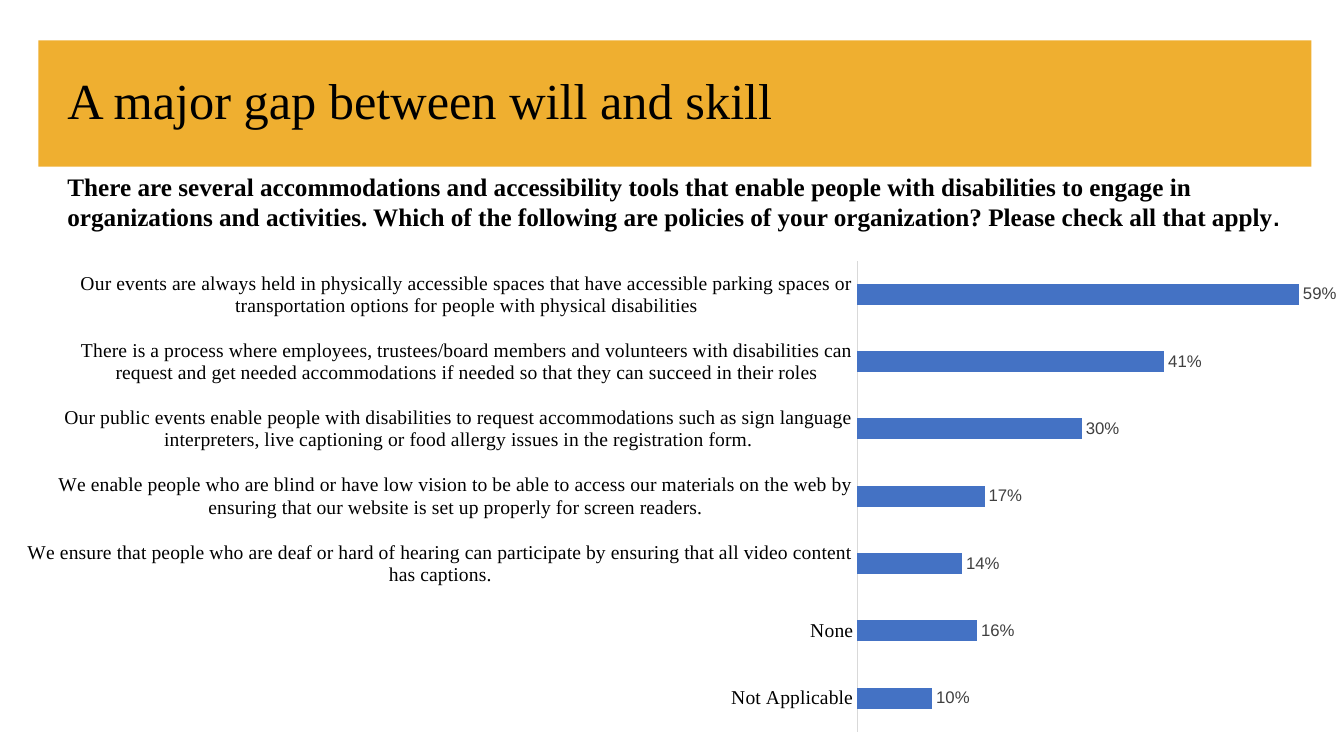
from dataclasses import dataclass

from lxml import etree
from pptx import Presentation
from pptx.chart.data import CategoryChartData
from pptx.dml.color import RGBColor
from pptx.enum import chart as charts, shapes, text
from pptx.oxml import ns
from pptx.util import Cm, Pt


@dataclass(frozen=True)
class Theme:
    banner: str = "EFAF30"
    ink: str = "000000"
    bar: str = "4472C4"
    value: str = "404040"
    axis: str = "D9D9D9"
    serif: str = "Times New Roman"
    sans: str = "Arial"
    title_size: int = 36
    question_size: int = 18
    stop_size: int = 16
    category_size: int = 14
    value_size: int = 12


THEME = Theme()

TITLE = "A major gap between will and skill"
QUESTION = (
    "There are several accommodations and accessibility tools that enable people with "
    "disabilities to engage in organizations and activities. Which of the following are "
    "policies of your organization? Please check all that apply"
)
# Answers from the bottom bar to the top bar, in percent
ANSWERS = [
    ("Not Applicable", 10),
    ("None", 16),
    ("We ensure that people who are deaf or hard of hearing can participate by "
     "ensuring that all video content has captions.", 14),
    ("We enable people who are blind or have low vision to be able to access our materials "
     "on the web by ensuring that our website is set up properly for screen readers.", 17),
    ("Our public events enable people with disabilities to request accommodations such as "
     "sign language interpreters, live captioning or food allergy issues in the "
     "registration form.", 30),
    ("There is a process where employees, trustees/board members and volunteers with "
     "disabilities can request and get needed accommodations if needed so that they can "
     "succeed in their roles", 41),
    ("Our events are always held in physically accessible spaces that have accessible "
     "parking spaces or transportation options for people with physical disabilities", 59),
]


def style_font(font, size, color, face, bold=False):
    font.size = Pt(size)
    font.color.rgb = RGBColor.from_string(color)
    font.name = face
    font.bold = bold


def add_banner(page, left, top, width, height):
    banner = page.shapes.add_shape(
        shapes.MSO_SHAPE.RECTANGLE, Cm(left), Cm(top), Cm(width), Cm(height))
    banner.shadow.inherit = False
    banner.fill.solid()
    banner.fill.fore_color.rgb = RGBColor.from_string(THEME.banner)
    banner.line.fill.background()


def add_text(page, left, top, width, height, spans, anchor, line_spacing=1.0):
    """Add one paragraph; each span is (words, size, face, bold)."""
    box = page.shapes.add_textbox(Cm(left), Cm(top), Cm(width), Cm(height))
    frame = box.text_frame
    frame.word_wrap = True
    frame.vertical_anchor = anchor
    para = frame.paragraphs[0]
    para.line_spacing = line_spacing
    for words, size, face, bold in spans:
        span = para.add_run()
        span.text = words
        style_font(span.font, size, THEME.ink, face, bold)


def place_plot(chart, **fractions):
    """Fix the inner plot area as fractions of the chart."""
    plot_area = chart.plots[0]._element.getparent()
    for old in plot_area.findall(ns.qn("c:layout")):
        plot_area.remove(old)
    layout = etree.Element(ns.qn("c:layout"))
    manual = etree.SubElement(layout, ns.qn("c:manualLayout"))
    settings = {"layoutTarget": "inner", "xMode": "edge", "yMode": "edge", **fractions}
    for tag, value in settings.items():
        etree.SubElement(manual, ns.qn(f"c:{tag}")).set("val", str(value))
    plot_area.insert(0, layout)


def add_answer_chart(page, left, top, width, height):
    data = CategoryChartData(number_format='0"%"')
    data.categories = [answer for answer, _ in ANSWERS]
    data.add_series("Series 1", [percent for _, percent in ANSWERS])
    chart = page.shapes.add_chart(
        charts.XL_CHART_TYPE.BAR_CLUSTERED,
        Cm(left), Cm(top), Cm(width), Cm(height), data).chart
    chart.has_legend = False
    chart.has_title = False
    style_font(chart.font, 10, THEME.ink, THEME.sans)
    place_plot(chart, x=0.6, y=0.02, w=0.38, h=0.96)

    # Axes
    answers = chart.category_axis
    answers.major_tick_mark = charts.XL_TICK_MARK.NONE
    answers.format.line.color.rgb = RGBColor.from_string(THEME.axis)
    answers.format.line.width = Pt(0.75)
    style_font(answers.tick_labels.font, THEME.category_size, THEME.ink, THEME.serif)
    percents = chart.value_axis
    percents.minimum_scale, percents.maximum_scale = 0, 70
    percents.has_major_gridlines = False
    percents.visible = False

    # Bars and their labels
    plot = chart.plots[0]
    plot.vary_by_categories = False
    plot.gap_width = 219
    bars = plot.series[0]
    bars.format.fill.solid()
    bars.format.fill.fore_color.rgb = RGBColor.from_string(THEME.bar)
    labels = bars.data_labels
    labels.show_value = True
    labels.number_format = '0"%"'
    labels.number_format_is_linked = False
    labels.position = charts.XL_LABEL_POSITION.OUTSIDE_END
    style_font(labels.font, THEME.value_size, THEME.value, THEME.sans)


def main():
    deck = Presentation()
    deck.slide_width, deck.slide_height = Cm(33.87), Cm(19.05)
    page = deck.slides.add_slide(deck.slide_layouts[6])

    # Title band
    add_banner(page, 0.97, 1.02, 32.08, 3.18)
    add_text(page, 1.45, 1.02, 29.21, 3.18,
             [(TITLE, THEME.title_size, THEME.serif, False)],
             text.MSO_ANCHOR.MIDDLE, 0.9)

    # Survey results
    add_answer_chart(page, 0.69, 6.32, 34.82, 12.37)

    # Survey question
    add_text(page, 1.45, 4.19, 31.47, 1.8,
             [(QUESTION, THEME.question_size, THEME.serif, True),
              (".", THEME.stop_size, THEME.sans, True)],
             text.MSO_ANCHOR.TOP)

    deck.save("out.pptx")


if __name__ == "__main__":
    main()
